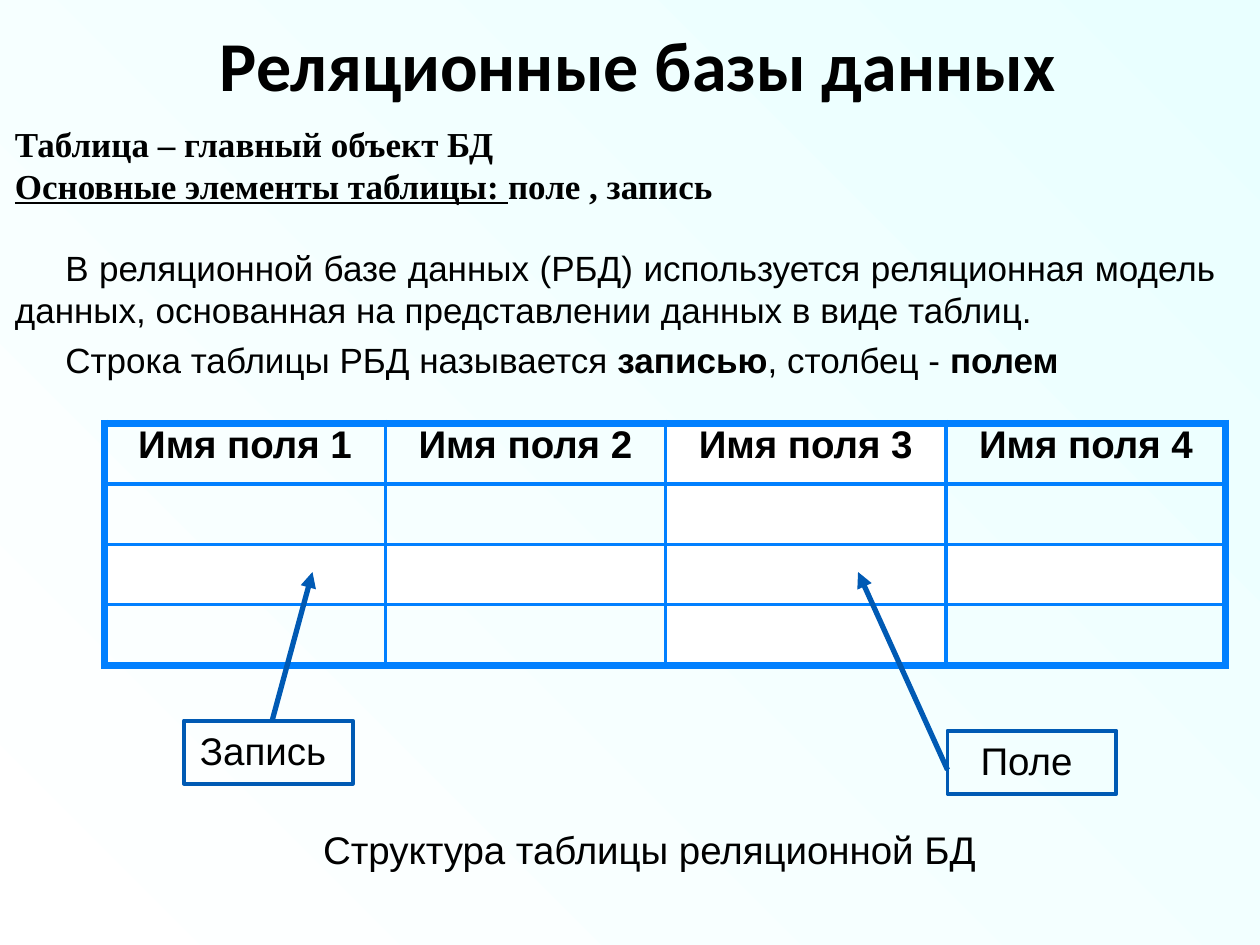
from lxml.etree import SubElement
from pptx import Presentation
from pptx.dml.color import RGBColor
from pptx.enum.shapes import MSO_CONNECTOR, MSO_SHAPE
from pptx.enum.text import MSO_ANCHOR, PP_ALIGN
from pptx.oxml.ns import qn
from pptx.util import Inches, Pt

BLACK = RGBColor(0x00, 0x00, 0x00)
WHITE = RGBColor(0xFF, 0xFF, 0xFF)
PALE_CYAN = RGBColor(0xE9, 0xFF, 0xFF)
GRID_BLUE = RGBColor(0x01, 0x80, 0xFF)
LABEL_BLUE = RGBColor(0x00, 0x5A, 0xB4)

THIN, THICK = 2.25, 4.5
COLUMN_WIDTHS = (2.23, 2.22, 2.23, 2.22)
ROW_COUNT = 4
ROW_HEIGHT = 0.48
WHITE_ROW, WHITE_COLUMN = 2, 2


def set_background(slide):
    fill = slide.background.fill
    fill.gradient()
    fill.gradient_angle = 45
    for stop, color in zip(fill.gradient_stops, (WHITE, PALE_CYAN)):
        stop.color.rgb = color


def add_run(p, text, size, font="Arial", bold=False, underline=False):
    r = p.add_run()
    r.text = text
    r.font.size = Pt(size)
    r.font.name = font
    r.font.bold = bold
    r.font.underline = underline
    r.font.color.rgb = BLACK


def add_text_box(slide, left, top, width, height):
    box = slide.shapes.add_textbox(Inches(left), Inches(top), Inches(width), Inches(height))
    tf = box.text_frame
    tf.word_wrap = True
    return tf


def add_centered_text(slide, bounds, text, size, font="Arial", bold=False):
    tf = add_text_box(slide, *bounds)
    p = tf.paragraphs[0]
    p.alignment = PP_ALIGN.CENTER
    add_run(p, text, size, font, bold)
    return tf


def add_title(slide, text):
    tf = add_centered_text(slide, (0.75, 0.21, 8.75, 0.71), text, 40, "Calibri", True)
    tf.vertical_anchor = MSO_ANCHOR.MIDDLE
    tf.paragraphs[0].line_spacing = 0.8


def add_heading(p, *parts):
    for text, underline in parts:
        add_run(p, text, 20, "Times New Roman", True, underline)


def add_body_paragraph(tf, space_before, *parts):
    p = tf.add_paragraph()
    p.alignment = PP_ALIGN.JUSTIFY
    p.space_before = Pt(space_before)
    p._p.get_or_add_pPr().set("indent", str(Inches(0.4)))
    for text, bold in parts:
        add_run(p, text, 20, bold=bold)


def add_explanation(slide):
    tf = add_text_box(slide, 0.02, 0.92, 9.73, 2.01)
    add_heading(tf.paragraphs[0], ("Таблица\u00a0– главный объект БД", False))
    add_heading(
        tf.add_paragraph(),
        ("Основные элементы таблицы: ", True),
        ("поле\u00a0,\u00a0запись", False),
    )
    add_body_paragraph(
        tf, 23,
        ("В реляционной базе данных (РБД) используется реляционная модель данных, "
         "основанная на представлении данных в виде таблиц.", False),
    )
    add_body_paragraph(
        tf, 4.4,
        ("Строка таблицы РБД называется ", False),
        ("записью", True),
        (", столбец - ", False),
        ("полем", True),
    )


def set_border(cell, side, width):
    ln = SubElement(cell._tc.get_or_add_tcPr(), qn(f"a:ln{side}"), w=str(Pt(width)))
    fill = SubElement(ln, qn("a:solidFill"))
    SubElement(fill, qn("a:srgbClr"), val=str(GRID_BLUE))


def style_cell(cell, row, col):
    outer_sides = {
        "L": col == 0,
        "R": col == len(COLUMN_WIDTHS) - 1,
        "T": row == 0,
        "B": row == ROW_COUNT - 1,
    }
    for side, is_outer in outer_sides.items():
        set_border(cell, side, THICK if is_outer else THIN)
    if row == WHITE_ROW or col == WHITE_COLUMN:
        cell.fill.solid()
        cell.fill.fore_color.rgb = WHITE
    else:
        cell.fill.background()


def add_field_table(slide):
    frame = slide.shapes.add_table(
        ROW_COUNT, len(COLUMN_WIDTHS), Inches(0.83), Inches(3.36),
        Inches(sum(COLUMN_WIDTHS)), Inches(ROW_COUNT * ROW_HEIGHT),
    )
    table = frame.table
    table.first_row = table.horz_banding = False
    for column, width in zip(table.columns, COLUMN_WIDTHS):
        column.width = Inches(width)
    for i, row in enumerate(table.rows):
        row.height = Inches(ROW_HEIGHT)
        for j, cell in enumerate(row.cells):
            style_cell(cell, i, j)
    for j, cell in enumerate(table.rows[0].cells, start=1):
        cell.margin_left = cell.margin_right = cell.margin_top = cell.margin_bottom = 0
        p = cell.text_frame.paragraphs[0]
        p.alignment = PP_ALIGN.CENTER
        add_run(p, f"Имя поля {j}", 22, bold=True)


def add_label(slide, left, top, text):
    sp = slide.shapes.add_shape(
        MSO_SHAPE.RECTANGLE, Inches(left), Inches(top), Inches(1.34), Inches(0.5)
    )
    sp.shadow.inherit = False
    sp.fill.background()
    sp.line.color.rgb = LABEL_BLUE
    sp.line.width = Pt(2.25)
    tf = sp.text_frame
    tf.vertical_anchor = MSO_ANCHOR.TOP
    p = tf.paragraphs[0]
    p.alignment = PP_ALIGN.CENTER
    add_run(p, text, 22)


def add_arrow(slide, start, end):
    points = [Inches(v) for v in (*start, *end)]
    arrow = slide.shapes.add_connector(MSO_CONNECTOR.STRAIGHT, *points)
    arrow.line.color.rgb = LABEL_BLUE
    arrow.line.width = Pt(3)
    SubElement(arrow.line._get_or_add_ln(), qn("a:tailEnd"), type="triangle")
    SubElement(arrow._element.spPr, qn("a:effectLst"))


def main():
    prs = Presentation()
    prs.slide_width = Inches(10)
    prs.slide_height = Inches(7.5)
    slide = prs.slides.add_slide(prs.slide_layouts[6])
    set_background(slide)
    add_title(slide, "Реляционные базы данных ")
    add_explanation(slide)
    add_field_table(slide)
    add_label(slide, 1.46, 5.72, "Запись ")
    add_label(slide, 7.52, 5.8, "Поле ")
    add_arrow(slide, (2.16, 5.72), (2.48, 4.54))
    add_arrow(slide, (7.52, 6.11), (6.81, 4.54))
    add_centered_text(slide, (0.98, 6.51, 8.35, 0.47), "Структура таблицы реляционной БД", 22)
    prs.save("out.pptx")


if __name__ == "__main__":
    main()
